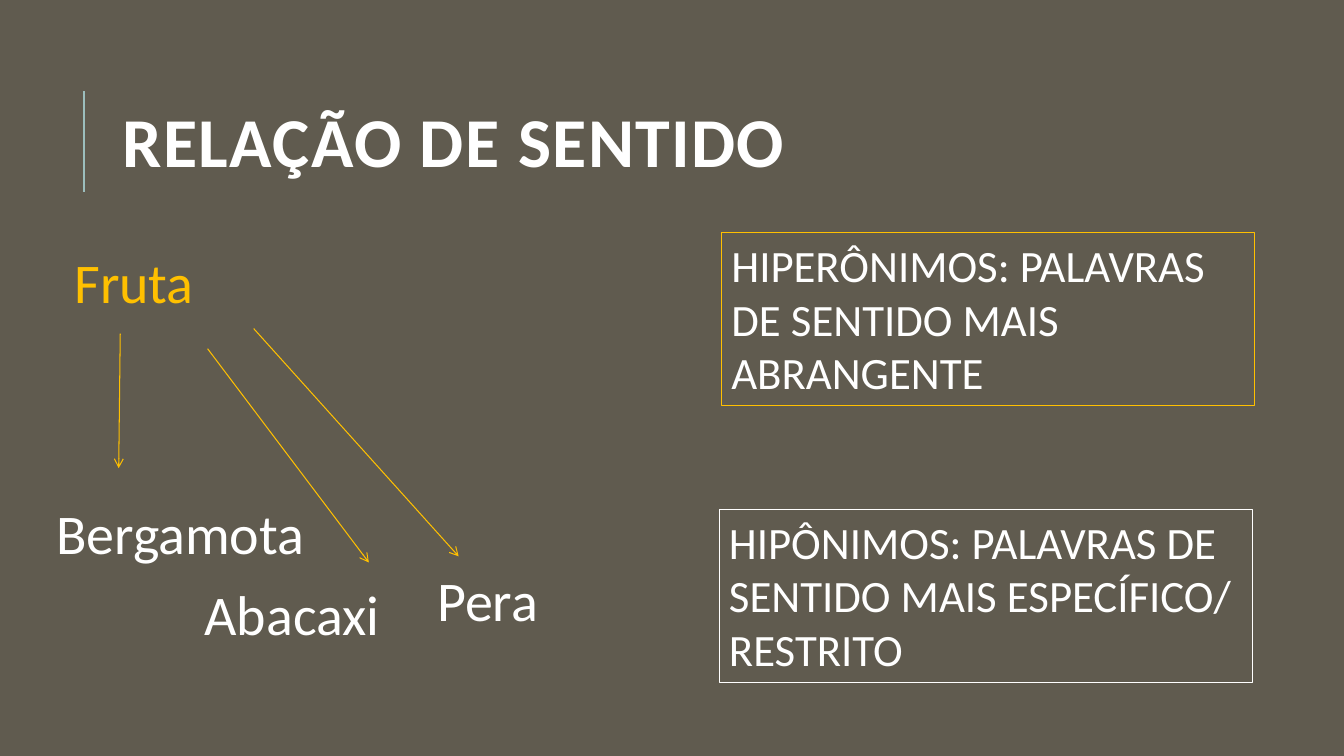
"""Build a slide on hypernyms and hyponyms."""
from lxml.etree import SubElement
from pptx import Presentation
from pptx.dml.color import RGBColor
from pptx.enum.shapes import MSO_CONNECTOR, MSO_SHAPE
from pptx.enum.text import MSO_ANCHOR, MSO_AUTO_SIZE, PP_ALIGN
from pptx.oxml.ns import qn
from pptx.util import Pt

BACK = RGBColor(0x60, 0x5B, 0x4F)
TEAL = RGBColor(0x9C, 0xBE, 0xBD)
GOLD = RGBColor(0xFF, 0xC0, 0x00)
WHITE = RGBColor(0xFF, 0xFF, 0xFF)


def write(shape, text, size, color):
    frame = shape.text_frame
    frame.text = text
    frame.word_wrap = True
    frame.auto_size = MSO_AUTO_SIZE.SHAPE_TO_FIT_TEXT
    frame.vertical_anchor = MSO_ANCHOR.TOP
    para = frame.paragraphs[0]
    para.alignment = PP_ALIGN.LEFT
    font = para.runs[0].font
    font.name = "Calibri"
    font.size = Pt(size)
    font.color.rgb = color


def add_title(slide, text):
    box = slide.shapes.add_textbox(Pt(80.6), Pt(46), Pt(765.4), Pt(118))
    write(box, text, 50, WHITE)
    frame = box.text_frame
    frame.auto_size = MSO_AUTO_SIZE.NONE
    frame.vertical_anchor = MSO_ANCHOR.MIDDLE
    para = frame.paragraphs[0]
    para.line_spacing = 0.8
    run = para.runs[0]
    run.font.bold = True
    run._r.get_or_add_rPr().set("spc", "100")


def add_word(slide, text, left, top, color=WHITE):
    box = slide.shapes.add_textbox(Pt(left), Pt(top), Pt(197.3), Pt(55.7))
    write(box, text, 40, color)


def add_frame(slide, text, left, top, color):
    box = slide.shapes.add_shape(
        MSO_SHAPE.RECTANGLE, Pt(left), Pt(top), Pt(381), Pt(123.6))
    box.shadow.inherit = False
    box.fill.background()
    box.line.color.rgb = color
    box.line.width = Pt(0.75)
    write(box, text, 32, WHITE)


def add_line(slide, start, end, color, width):
    line = slide.shapes.add_connector(
        MSO_CONNECTOR.STRAIGHT, *map(Pt, start + end))
    line.line.color.rgb = color
    line.line.width = Pt(width)
    SubElement(line._element.spPr, qn("a:effectLst"))
    return line


def add_arrow(slide, start, end):
    arrow = add_line(slide, start, end, GOLD, 0.75)
    SubElement(arrow.line._get_or_add_ln(), qn("a:tailEnd"), type="arrow")


def main():
    deck = Presentation()
    deck.slide_width, deck.slide_height = Pt(960), Pt(540)
    slide = deck.slides.add_slide(deck.slide_layouts[6])
    fill = slide.background.fill
    fill.solid()
    fill.fore_color.rgb = BACK

    add_line(slide, (60, 136.8), (60, 64.8), TEAL, 1.5)
    add_title(slide, "RELAÇÃO DE SENTIDO")

    add_frame(slide, "HIPERÔNIMOS: PALAVRAS DE SENTIDO MAIS ABRANGENTE",
              515.3, 166.2, GOLD)
    add_frame(slide, "HIPÔNIMOS: PALAVRAS DE SENTIDO MAIS ESPECÍFICO/ RESTRITO",
              513.6, 363.9, WHITE)

    add_word(slide, "Fruta", 46.1, 173.5, GOLD)
    add_word(slide, "Bergamota", 33.1, 352.8)
    add_word(slide, "Abacaxi", 139, 410.4)
    add_word(slide, "Pera", 305.3, 400.3)

    add_arrow(slide, (85.9, 238.3), (84.8, 334.4))
    add_arrow(slide, (181.2, 234.7), (327.6, 397.4))
    add_arrow(slide, (148.3, 249.1), (263.5, 401.8))
    deck.save("out.pptx")


if __name__ == "__main__":
    main()
